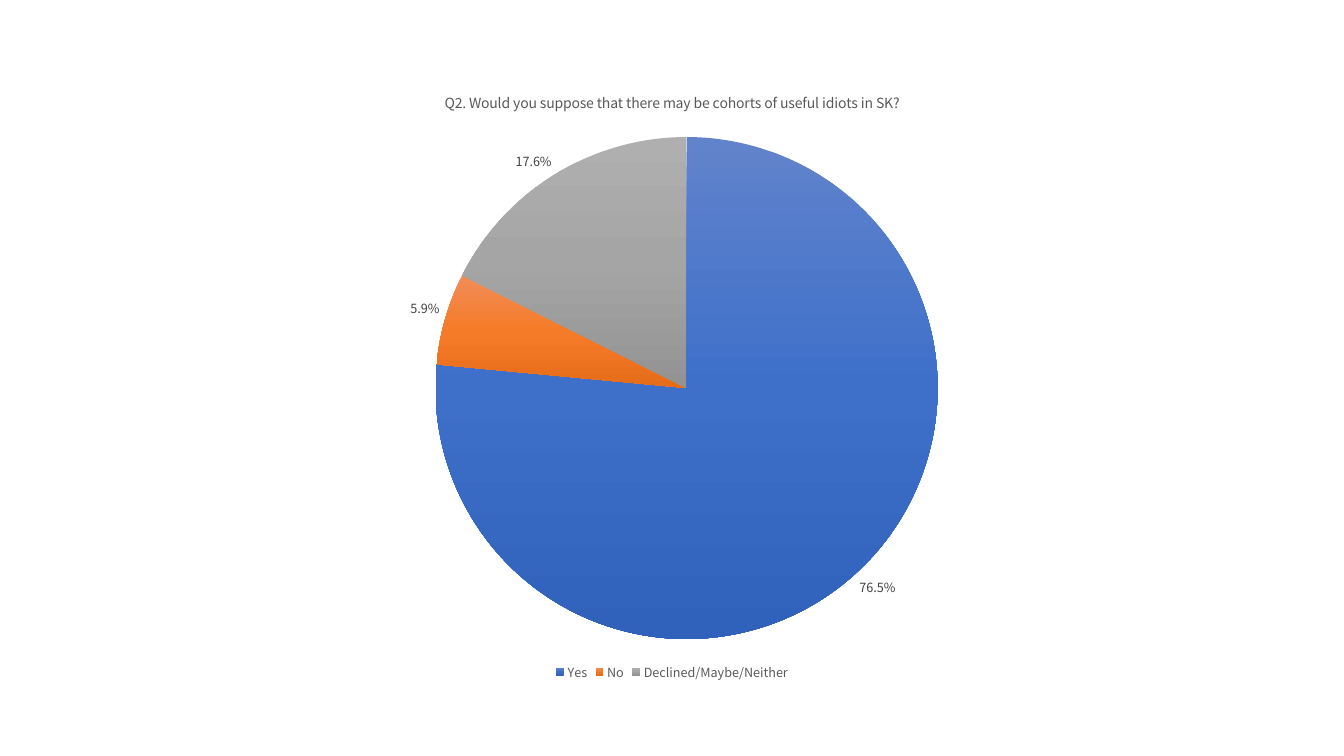
from copy import deepcopy
from dataclasses import dataclass

from pptx import Presentation
from pptx.chart.data import CategoryChartData
from pptx.dml.color import RGBColor
from pptx.enum.chart import XL_CHART_TYPE, XL_LABEL_POSITION, XL_LEGEND_POSITION
from pptx.oxml import parse_xml
from pptx.oxml.ns import nsdecls
from pptx.util import Inches, Pt


@dataclass(frozen=True)
class Theme:
    font: str = "Noto Sans CJK KR"
    text: str = "595959"
    label: str = "404040"
    title_size: int = 10
    small_size: int = 9
    slices: tuple = (
        ("6183CB", "3E70CA", "3062BB"),
        ("F18C57", "F67B28", "E56C19"),
        ("AFAFAF", "A5A5A5", "939393"),
    )


THEME = Theme()
QUESTION = "Q2. Would you suppose that there may be cohorts of useful idiots in SK?"
ANSWERS = {"Yes": 0.765, "No": 0.059, "Declined/Maybe/Neither": 0.176}


def style_font(font, size, color):
    font.name = THEME.font
    font.size = Pt(size)
    font.bold = False
    font.color.rgb = RGBColor.from_string(color)


def fill_slice(series, index, colors):
    """Fill one slice from top to bottom with evenly spaced colours."""
    fmt = series.points[index].format
    fmt.line.fill.background()
    fmt.fill.gradient()
    fmt.fill.gradient_angle = 270
    stop_list = series._element.xpath(f"c:dPt[c:idx/@val='{index}']//a:gsLst")[0]
    while len(stop_list) < len(colors):
        stop_list.append(deepcopy(stop_list[-1]))
    for i, (stop, color) in enumerate(zip(fmt.fill.gradient_stops, colors)):
        stop.position = i / (len(colors) - 1)
        stop.color.rgb = RGBColor.from_string(color)


def place_plot(chart, x, y, w, h):
    """Fix the inner plot area, in fractions of the chart."""
    plot_area = chart._chartSpace.chart.plotArea
    for layout in plot_area.xpath("c:layout"):
        plot_area.remove(layout)
    sizes = "".join(f'<c:{k} val="{v}"/>' for k, v in zip("xywh", (x, y, w, h)))
    plot_area.insert(0, parse_xml(
        f'<c:layout {nsdecls("c")}><c:manualLayout><c:layoutTarget val="inner"/>'
        f'<c:xMode val="edge"/><c:yMode val="edge"/>{sizes}'
        "</c:manualLayout></c:layout>"))


def add_answer_pie(slide, left, top, width, height):
    data = CategoryChartData(number_format="0.0%")
    data.categories = list(ANSWERS)
    data.add_series(QUESTION, list(ANSWERS.values()))
    chart = slide.shapes.add_chart(
        XL_CHART_TYPE.PIE, left, top, width, height, data).chart
    style_font(chart.font, THEME.title_size, "000000")

    chart.has_title = True
    p = chart.chart_title.text_frame.paragraphs[0]
    p.text = QUESTION
    style_font(p.font, THEME.title_size, THEME.text)
    chart.chart_title.include_in_layout = False

    chart.has_legend = True
    chart.legend.position = XL_LEGEND_POSITION.BOTTOM
    chart.legend.include_in_layout = False
    style_font(chart.legend.font, THEME.small_size, THEME.text)

    plot = chart.plots[0]
    plot.vary_by_categories = True
    for i, colors in enumerate(THEME.slices):
        fill_slice(plot.series[0], i, colors)

    labels = plot.series[0].data_labels
    labels.show_value = True
    labels.number_format = "0.0%"
    labels.number_format_is_linked = False
    labels.position = XL_LABEL_POSITION.OUTSIDE_END
    style_font(labels.font, THEME.small_size, THEME.label)

    diameter = Inches(4.98)
    place_plot(chart, Inches(3.62) / width, Inches(0.66) / height,
               diameter / width, diameter / height)


def main():
    prs = Presentation()
    prs.slide_width, prs.slide_height = Inches(13.33), Inches(7.5)
    s = prs.slides.add_slide(prs.slide_layouts[6])
    add_answer_pie(s, Inches(0.7), Inches(0.7), Inches(11.93), Inches(6.09))
    prs.save("out.pptx")


if __name__ == "__main__":
    main()
